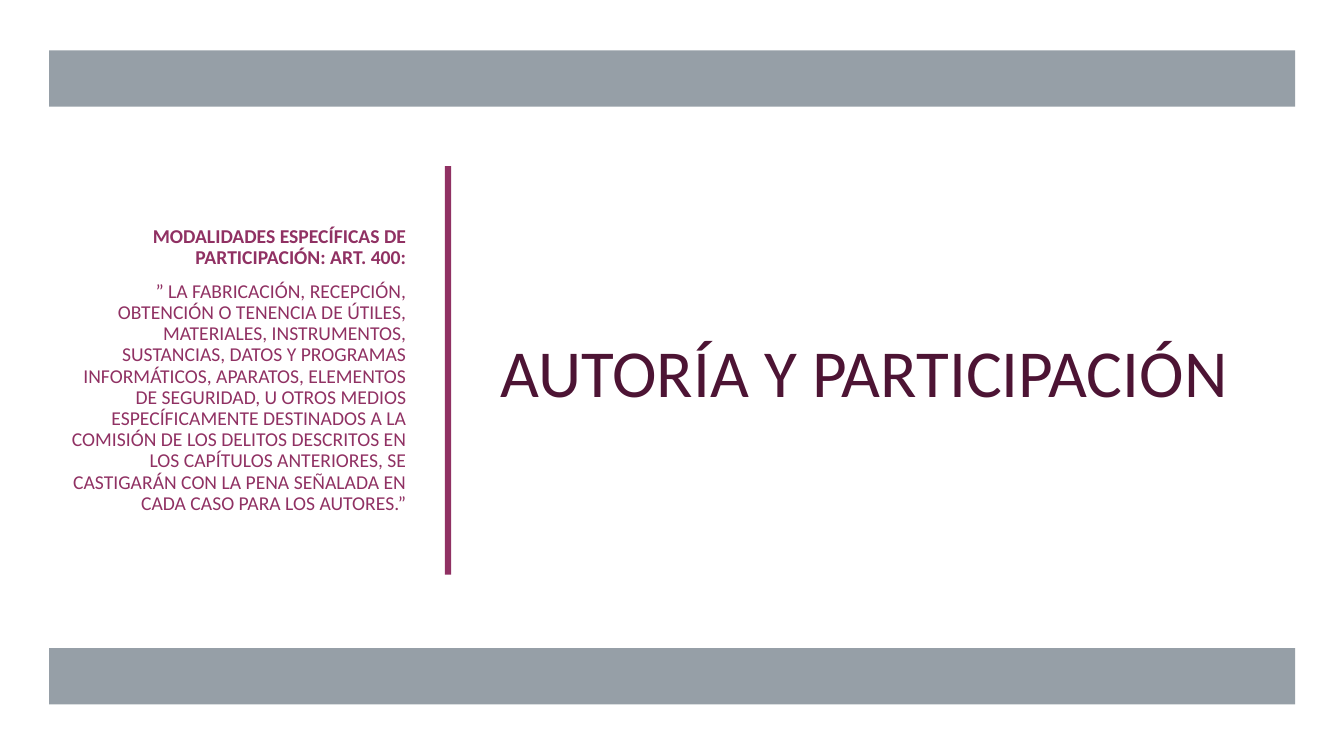
from pptx import Presentation
from pptx.dml.color import RGBColor
from pptx.enum.shapes import MSO_SHAPE as Shape
from pptx.enum.text import MSO_ANCHOR as Anchor, PP_ALIGN as Align
from pptx.util import Cm, Pt

SLATE, PLUM, DARK_PLUM = "969FA7", "903163", "4D1434"
MARGIN, CONTENT_WIDTH = 1.24, 31.4
BODY_TOP, BODY_HEIGHT = 4.19, 10.29

deck = Presentation()
deck.slide_width, deck.slide_height = Cm(33.87), Cm(19.05)
slide = deck.slides.add_slide(deck.slide_layouts[6])


def add_bar(left, top, width, height, color):
    bar = slide.shapes.add_shape(Shape.RECTANGLE, Cm(left), Cm(top), Cm(width), Cm(height))
    bar.shadow.inherit = False
    bar.fill.solid()
    bar.fill.fore_color.rgb = RGBColor.from_string(color)
    bar.line.fill.background()


def add_text(frame, text, size, color, bold=False, align=Align.LEFT,
             line_spacing=1.0, before=0, after=0, first=True):
    paragraph = frame.paragraphs[0] if first else frame.add_paragraph()
    paragraph.alignment = align
    paragraph.line_spacing = line_spacing
    paragraph.space_before, paragraph.space_after = Pt(before), Pt(after)
    run = paragraph.add_run()
    run.text = text
    run.font.name, run.font.size, run.font.bold = "Calibri", Pt(size), bold
    run.font.color.rgb = RGBColor.from_string(color)


# Bands at top and bottom, divider between article and title
for band_top in (1.27, 16.33):
    add_bar(MARGIN, band_top, CONTENT_WIDTH, 1.42, SLATE)
add_bar(11.21, BODY_TOP, 0.16, BODY_HEIGHT, PLUM)

# Text areas on either side of the divider
frames = []
for left, width in ((12.37, 20.27), (MARGIN, 9.25)):
    area = slide.shapes.add_textbox(Cm(left), Cm(BODY_TOP), Cm(width), Cm(BODY_HEIGHT))
    area.text_frame.word_wrap = True
    area.text_frame.vertical_anchor = Anchor.MIDDLE
    frames.append(area.text_frame)
title, article = frames

# Title
add_text(title, "AUTORÍA Y PARTICIPACIÓN", 48, DARK_PLUM)

# Article 400
article_format = dict(size=14, color=PLUM, align=Align.RIGHT, line_spacing=0.9, after=6)
add_text(article, "MODALIDADES ESPECÍFICAS DE PARTICIPACIÓN: ART. 400:",
         bold=True, **article_format)
add_text(article,
         "” LA FABRICACIÓN, RECEPCIÓN, OBTENCIÓN O TENENCIA DE ÚTILES, MATERIALES, "
         "INSTRUMENTOS, SUSTANCIAS, DATOS Y PROGRAMAS INFORMÁTICOS, APARATOS, ELEMENTOS "
         "DE SEGURIDAD, U OTROS MEDIOS ESPECÍFICAMENTE DESTINADOS A LA COMISIÓN DE LOS "
         "DELITOS DESCRITOS EN LOS CAPÍTULOS ANTERIORES, SE CASTIGARÁN CON LA PENA "
         "SEÑALADA EN CADA CASO PARA LOS AUTORES.”",
         before=3, first=False, **article_format)

deck.save("out.pptx")
